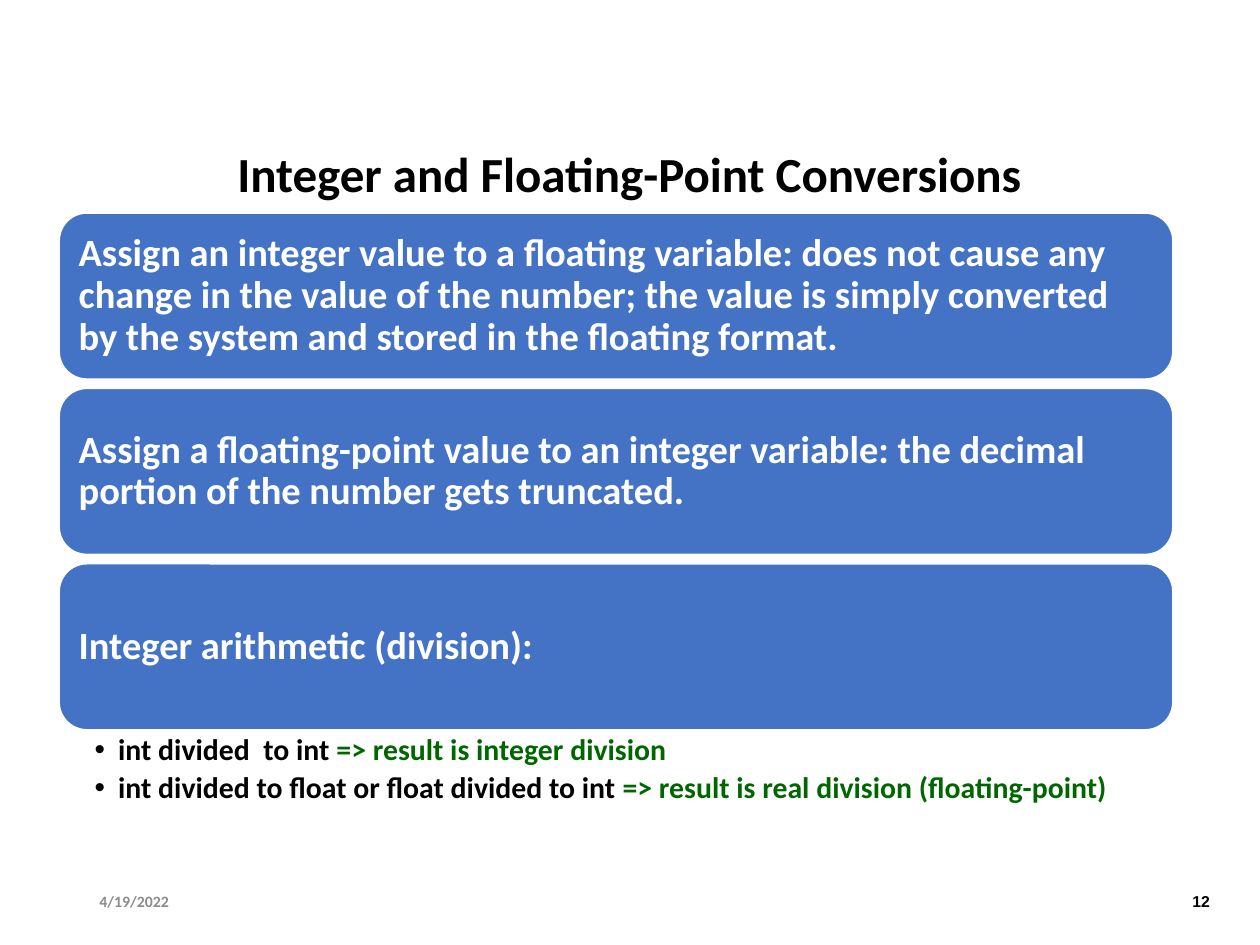
from dataclasses import dataclass

from lxml.etree import SubElement
from pptx import Presentation
from pptx.dml.color import RGBColor
from pptx.enum.shapes import MSO_SHAPE as Preset
from pptx.enum.text import MSO_ANCHOR as Anchor, MSO_AUTO_SIZE as AutoSize, PP_ALIGN as Align
from pptx.oxml.ns import qn
from pptx.util import Pt

BLACK = RGBColor(0x00, 0x00, 0x00)
WHITE = RGBColor(0xFF, 0xFF, 0xFF)
BLUE = RGBColor(0x44, 0x72, 0xC4)
GREEN = RGBColor(0x00, 0x66, 0x00)
GRAY = RGBColor(0x8C, 0x8C, 0x8C)

# Card grid, in points
CARD_LEFT, CARD_TOP = 33.8, 121.7
CARD_WIDTH, CARD_HEIGHT, CARD_PITCH = 636.5, 95, 100.2

CARDS = [
    "Assign an integer value to a floating variable: does not cause any change in the value "
    "of the number; the value is simply converted by the system and stored in the floating format.",
    "Assign a floating-point value to an integer variable: the decimal portion of the number "
    "gets truncated.",
    "Integer arithmetic (division):",
]


@dataclass
class DivisionRule:
    operands: str
    result: str


RULES = [
    DivisionRule("int divided  to int ", "=> result is integer division"),
    DivisionRule("int divided to float or float divided to int ",
                 "=> result is real division (floating-point)"),
]


@dataclass
class FooterField:
    text: str
    left: float
    width: float
    font: str
    color: RGBColor
    align: Align


FOOTER = [
    FooterField("4/19/2022", 49.7, 68.4, "Calibri", GRAY, Align.LEFT),
    FooterField("12", 670.3, 28.1, "Arial", BLACK, Align.RIGHT),
]


def place(shape, left: float, top: float, width: float, height: float) -> None:
    shape.left, shape.top, shape.width, shape.height = map(Pt, (left, top, width, height))


def set_frame(frame, anchor: Anchor, left: float, top: float, right: float, bottom: float) -> None:
    frame.word_wrap = True
    frame.auto_size = AutoSize.NONE
    frame.vertical_anchor = anchor
    frame.margin_left, frame.margin_top = Pt(left), Pt(top)
    frame.margin_right, frame.margin_bottom = Pt(right), Pt(bottom)


def add_run(paragraph, text: str, size: float, color: RGBColor, font: str = "Calibri") -> None:
    run = paragraph.add_run()
    run.text = text
    run.font.name, run.font.size, run.font.bold = font, Pt(size), True
    run.font.color.rgb = color


def add_card(slide, top: float, text: str) -> None:
    card = slide.shapes.add_shape(Preset.ROUNDED_RECTANGLE, Pt(CARD_LEFT), Pt(top),
                                  Pt(CARD_WIDTH), Pt(CARD_HEIGHT))
    card.shadow.inherit = False
    card.fill.solid()
    card.fill.fore_color.rgb = BLUE
    card.line.color.rgb = WHITE
    card.line.width = Pt(1)
    set_frame(card.text_frame, Anchor.MIDDLE, 6.6, 6.6, 6.6, 6.6)
    paragraph = card.text_frame.paragraphs[0]
    paragraph.alignment, paragraph.line_spacing = Align.LEFT, 0.9
    add_run(paragraph, text, 22, WHITE)


def add_rule(paragraph, rule: DivisionRule) -> None:
    paragraph.level = 1
    properties = paragraph._p.get_or_add_pPr()
    properties.set("marL", str(Pt(13.5)))
    properties.set("indent", str(-Pt(13.5)))
    paragraph.line_spacing = 0.9
    paragraph.space_before, paragraph.space_after = Pt(0), Pt(3.4)
    SubElement(properties, qn("a:buFont"), typeface="Arial")
    SubElement(properties, qn("a:buChar"), char="•")
    add_run(paragraph, rule.operands, 17, BLACK)
    add_run(paragraph, rule.result, 17, GREEN)


def add_footer(slide, field: FooterField) -> None:
    box = slide.shapes.add_textbox(Pt(field.left), Pt(500.4), Pt(field.width), Pt(28.8))
    set_frame(box.text_frame, Anchor.MIDDLE, 7.2, 3.6, 7.2, 3.6)
    paragraph = box.text_frame.paragraphs[0]
    paragraph.alignment = field.align
    add_run(paragraph, field.text, 9, field.color, field.font)


def main() -> None:
    presentation = Presentation()
    presentation.slide_width, presentation.slide_height = Pt(720), Pt(540)
    slide = presentation.slides.add_slide(presentation.slide_layouts[1])

    # Title
    title = slide.shapes.title
    place(title, 98.6, 80.6, 522, 40.3)
    set_frame(title.text_frame, Anchor.MIDDLE, 7.2, 3.6, 7.2, 3.6)
    heading = title.text_frame.paragraphs[0]
    heading.alignment, heading.line_spacing = Align.CENTER, 0.9
    add_run(heading, "Integer and Floating-Point Conversions", 28, BLACK)

    # Conversion cards
    for row, text in enumerate(CARDS):
        add_card(slide, CARD_TOP + row * CARD_PITCH, text)

    # Division rules
    body = slide.placeholders[1]
    place(body, CARD_LEFT, 417.6, CARD_WIDTH, 46.8)
    frame = body.text_frame
    set_frame(frame, Anchor.TOP, 20.2, 2.2, 12.2, 2.2)
    for index, rule in enumerate(RULES):
        add_rule(frame.add_paragraph() if index else frame.paragraphs[0], rule)

    # Date and slide number
    for field in FOOTER:
        add_footer(slide, field)

    presentation.save("out.pptx")


if __name__ == "__main__":
    main()
